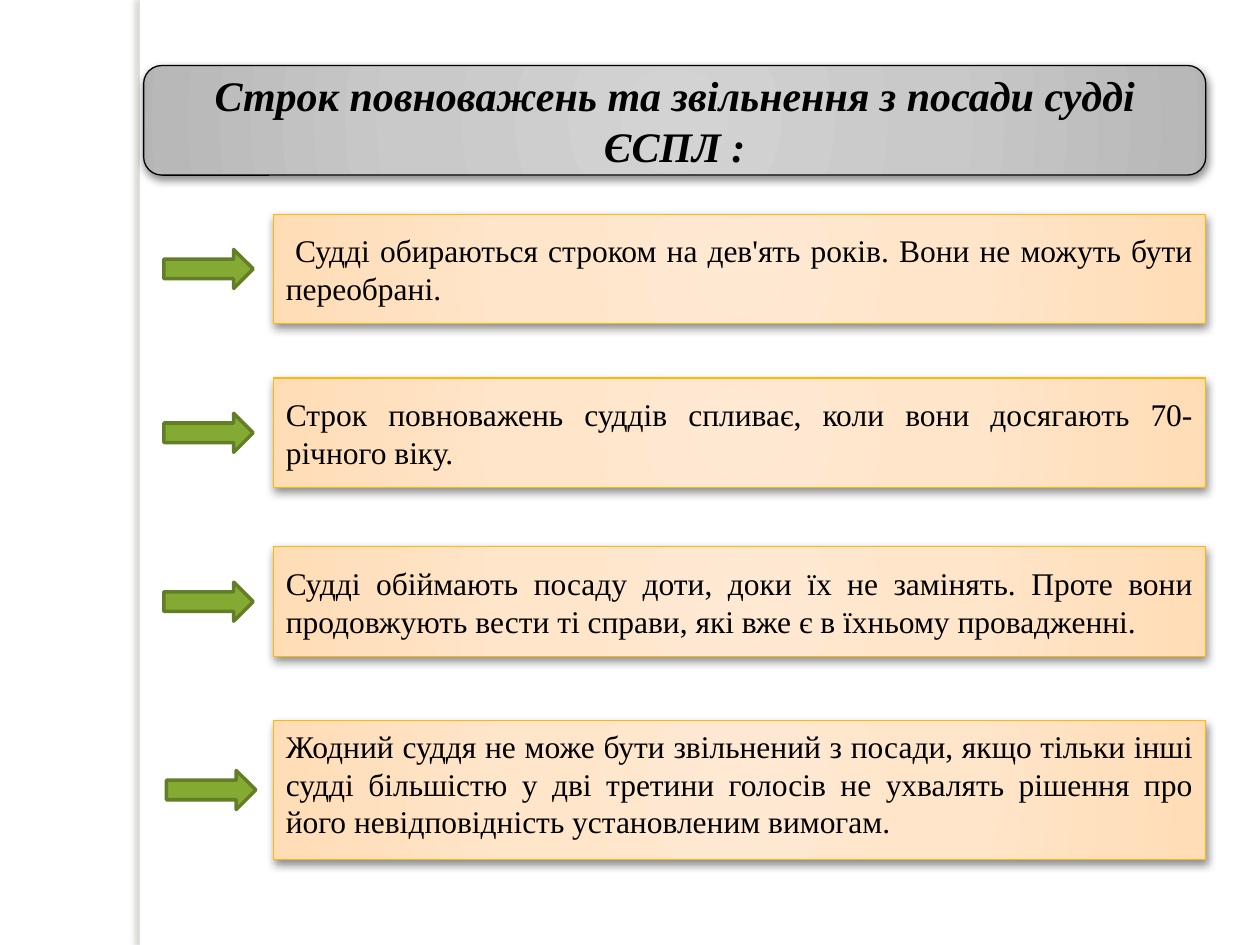
"""Build a slide on the term of office and dismissal of ECHR judges."""
from dataclasses import dataclass

import lxml.etree
import pptx
import pptx.dml.color
import pptx.enum.shapes
import pptx.enum.text
import pptx.oxml.ns
import pptx.util

Pt = pptx.util.Pt
RGBColor = pptx.dml.color.RGBColor
Geometry = pptx.enum.shapes.MSO_SHAPE
Align = pptx.enum.text.PP_ALIGN
Anchor = pptx.enum.text.MSO_ANCHOR
qn = pptx.oxml.ns.qn

BLACK = RGBColor(0x00, 0x00, 0x00)
WHITE = RGBColor(0xFF, 0xFF, 0xFF)
AMBER = RGBColor(0xFE, 0xB8, 0x0A)
GREEN = RGBColor(0x84, 0xAA, 0x33)
DARK_GREEN = RGBColor(0x62, 0x7E, 0x26)
TAUPE = RGBColor(0x73, 0x6F, 0x63)
GREYS = tuple(map(RGBColor.from_string, ("D3D3D3", "C9C9C9", "B8B8B8", "B2B2B2")))
PEACHES = tuple(map(RGBColor.from_string, ("FFE9D3", "FFE5C9", "FFDDB7", "FFDBB2")))
STOPS = (0, 50, 97, 100)

SERIF = "Times New Roman"
RULE_LEFT, RULE_WIDTH = 156.24, 532.8
ARROW_WIDTH, ARROW_HEIGHT = 51.12, 22.32


@dataclass(frozen=True)
class Shadow:
    """Outer shadow, with alpha in percent and direction in degrees."""
    color: RGBColor
    alpha: int
    blur: float
    distance: float
    direction: int


@dataclass(frozen=True)
class Rule:
    """One rule on judges and the arrow that points to it."""
    text: str
    top: float
    height: float = 62.64
    anchor: Anchor = Anchor.MIDDLE
    lead: str = ""
    arrow_left: float = 93.6


PANEL_SHADOW = Shadow(BLACK, 43, 5, 2, 90)
EDGE_SHADOW = Shadow(TAUPE, 25, 3, 3, 180)
RULES = (
    Rule("Судді обираються строком на дев'ять років. Вони не можуть бути переобрані.",
         122.4, lead=" "),
    Rule("Строк повноважень суддів спливає, коли вони досягають 70-річного віку.", 216),
    Rule("Судді обіймають посаду доти, доки їх не замінять. Проте вони продовжують "
         "вести ті справи, які вже є в їхньому провадженні.", 312.48),
    Rule("Жодний суддя не може бути звільнений з посади, якщо тільки інші судді "
         "більшістю у дві третини голосів не ухвалять рішення про його "
         "невідповідність установленим вимогам.",
         411.84, height=79.2, anchor=Anchor.TOP, arrow_left=95.04),
)


def add_child(parent, tag: str, **attributes):
    """Append a DrawingML element and return it."""
    values = {name: str(value) for name, value in attributes.items()}
    return lxml.etree.SubElement(parent, qn(tag), values)


def add_color(parent, color: RGBColor):
    """Append an RGB colour element and return it."""
    return add_child(parent, "a:srgbClr", val=color)


def fill_radial(shape, colors: tuple) -> None:
    """Fill a shape with a gradient that spreads from its centre."""
    shape.fill.gradient()
    gradient = shape.element.spPr.find(qn("a:gradFill"))
    for child in list(gradient):
        gradient.remove(child)
    stops = add_child(gradient, "a:gsLst")
    for position, color in zip(STOPS, colors):
        add_color(add_child(stops, "a:gs", pos=position * 1000), color)
    circle = add_child(gradient, "a:path", path="circle")
    add_child(circle, "a:fillToRect", l=50000, t=50000, r=50000, b=50000)


def add_shadow(shape, shadow: Shadow) -> None:
    """Give a shape an outer shadow."""
    effects = shape.element.spPr.find(qn("a:effectLst"))
    outer = add_child(effects, "a:outerShdw", blurRad=Pt(shadow.blur),
                      dist=Pt(shadow.distance), dir=shadow.direction * 60000,
                      algn="ctr", rotWithShape=0)
    add_child(add_color(outer, shadow.color), "a:alpha", val=shadow.alpha * 1000)


def draw_shape(slide, geometry: Geometry, left: float, top: float, width: float,
               height: float, *, color: RGBColor | None = None, gradient: tuple = (),
               line: RGBColor | None = None, line_width: float = 0.75,
               shadow: Shadow | None = None):
    """Draw a preset shape, measured in points."""
    shape = slide.shapes.add_shape(geometry, Pt(left), Pt(top), Pt(width), Pt(height))
    shape.shadow.inherit = False
    if gradient:
        fill_radial(shape, gradient)
    else:
        shape.fill.solid()
        shape.fill.fore_color.rgb = color
    if line is None:
        shape.line.fill.background()
    else:
        shape.line.color.rgb = line
        shape.line.width = Pt(line_width)
    if shadow:
        add_shadow(shape, shadow)
    return shape


def write_text(shape, text: str, *, size: float, align: Align, anchor: Anchor,
               lead: str = "", bold: bool = False, italic: bool = False) -> None:
    """Write one paragraph into a shape, after an optional lead."""
    frame = shape.text_frame
    frame.word_wrap = True
    frame.vertical_anchor = anchor
    paragraph = frame.paragraphs[0]
    paragraph.alignment = align
    for words, family in ((lead, "Cabin"), (text, SERIF)):
        if words:
            run = paragraph.add_run()
            run.text = words
            run.font.name = family
            run.font.size = Pt(size)
            run.font.bold = bold
            run.font.italic = italic
            run.font.color.rgb = BLACK


def draw_rule(slide, rule: Rule) -> None:
    """Draw a rule panel with its text."""
    panel = draw_shape(slide, Geometry.RECTANGLE, RULE_LEFT, rule.top, RULE_WIDTH,
                       rule.height, gradient=PEACHES, line=AMBER, shadow=PANEL_SHADOW)
    write_text(panel, rule.text, size=18, align=Align.JUSTIFY, anchor=rule.anchor,
               lead=rule.lead)


def draw_arrow(slide, rule: Rule) -> None:
    """Draw the arrow level with the middle of a rule panel."""
    top = rule.top + (rule.height - ARROW_HEIGHT) / 2
    draw_shape(slide, Geometry.RIGHT_ARROW, rule.arrow_left, top, ARROW_WIDTH,
               ARROW_HEIGHT, color=GREEN, line=DARK_GREEN, line_width=2)


def main() -> None:
    """Build and save the presentation."""
    presentation = pptx.Presentation()
    presentation.slide_width, presentation.slide_height = Pt(720), Pt(540)
    slide = presentation.slides.add_slide(presentation.slide_layouts[6])
    slide.background.fill.solid()
    slide.background.fill.fore_color.rgb = WHITE

    draw_shape(slide, Geometry.RECTANGLE, 79.92, 0, 5.76, 540, color=WHITE,
               shadow=EDGE_SHADOW)
    heading = draw_shape(slide, Geometry.ROUNDED_RECTANGLE, 82.08, 37.44, 606.96, 62.64,
                         gradient=GREYS, line=BLACK, shadow=PANEL_SHADOW)
    write_text(heading, "Строк повноважень та звільнення з посади судді ЄСПЛ :", size=24,
               align=Align.CENTER, anchor=Anchor.MIDDLE, bold=True, italic=True)
    for draw in (draw_rule, draw_arrow):
        for rule in RULES:
            draw(slide, rule)
    presentation.save("out.pptx")


if __name__ == "__main__":
    main()
